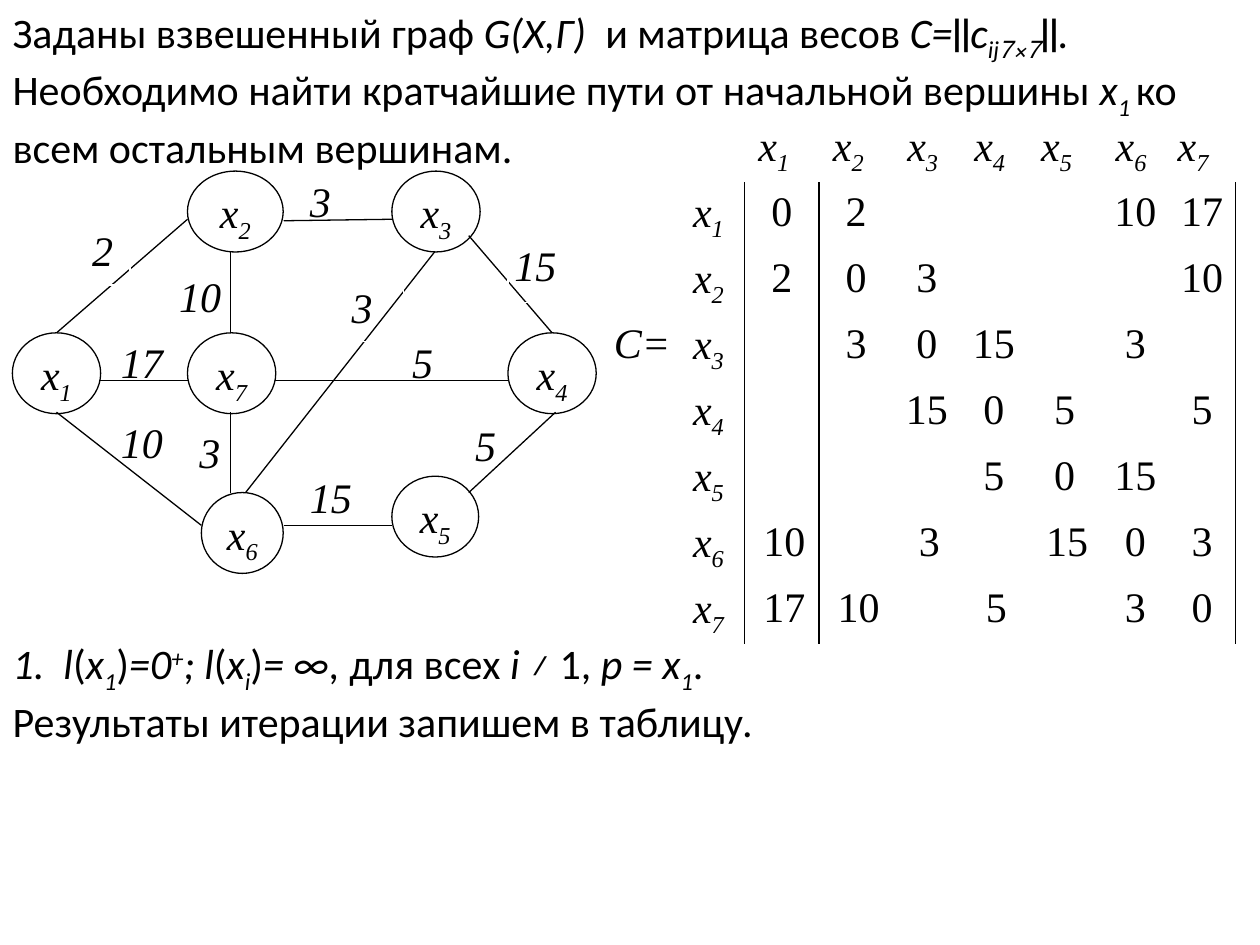
from lxml import etree
from pptx import Presentation
from pptx import util as u
from pptx.dml import color
from pptx.enum import shapes, text
from pptx.oxml import ns

Cm, Pt = u.Cm, u.Pt
SANS, SERIF = "Calibri", "Times New Roman"
BLACK, WHITE = "000000", "FFFFFF"
PLAIN = "{2D5ABB26-0587-4C30-8999-92F81FD0307C}"
TALL = 1.63

# Vertex: left, top, width
NODES = {
    1: (0.25, 6.71, 1.78), 2: (3.78, 3.45, 1.93), 3: (7.9, 3.45, 1.78),
    4: (10.24, 6.71, 1.78), 5: (7.9, 9.6, 1.75), 6: (4.06, 9.93, 1.65),
    7: (3.78, 6.71, 1.78),
}
# Edge: weight, line ends, label box
EDGES = {
    (1, 2): (2, (1.14, 6.71, 3.78, 4.42), (1.73, 4.45, 0.89, 1.3)),
    (1, 6): (10, (1.14, 8.31, 4.06, 10.59), (2.31, 8.31, 1.47, 1.3)),
    (1, 7): (17, (2.01, 7.67, 3.78, 7.67), (2.31, 6.71, 1.75, 1.3)),
    (2, 3): (3, (5.72, 4.45, 7.9, 4.42), (6.12, 3.45, 1.17, 1.3)),
    (2, 7): (10, (4.65, 5.08, 4.65, 6.71), (3.48, 5.38, 1.75, 1.3)),
    (3, 4): (15, (9.45, 4.75, 11.13, 6.71), (10.24, 4.75, 1.4, 1.35)),
    (3, 6): (3, (8.76, 5.08, 4.95, 9.93), (6.96, 5.59, 1.17, 1.3)),
    (4, 5): (5, (11.2, 8.31, 9.45, 9.93), (9.45, 8.38, 1.22, 1.3)),
    (4, 7): (5, (5.54, 7.67, 10.26, 7.67), (8.18, 6.71, 1.47, 1.3)),
    (5, 6): (15, (5.72, 10.59, 7.9, 10.59), (6.12, 9.42, 1.75, 1.17)),
    (6, 7): (3, (4.65, 8.31, 4.65, 9.93), (3.89, 8.51, 1.19, 1.3)),
}
FRONT = [(1, 2), (3, 4), (3, 6)]
WIDTHS = [1.6, 1.32, 1.5, 1.5, 1.35, 1.35, 1.5, 1.35, 1.35]

# Runs: text and style (i italic, s subscript, p superscript)
TASK = [
    ("Заданы взвешенный граф ", ""), ("G(X,Г) ", "i"),
    (" и матрица весов ", ""), ("C=", "i"), ("׀׀", ""), ("c", "i"),
    ("ij", "is"), ("׀׀", ""), ("7×7", "is"), (".", "i"),
    (" Необходимо найти кратчайшие пути от начальной вершины ", ""),
    ("x", "i"), ("1 ", "is"), ("ко всем остальным вершинам.", ""),
]
STEPS = [
    [("1.  l", "i"), ("(", ""), ("x", "i"), ("1", "is"), (")", ""),
     ("=0", "i"), ("+", "ip"), ("; l", "i"), ("(", ""), ("x", "i"),
     ("i", "is"), (")", ""), ("= ∞,", "i"), (" для всех ", ""),
     ("i ≠ ", "i"), ("1, ", ""), ("p = x", "i"), ("1", "is"), (".", "")],
    [("Результаты итерации запишем в таблицу.", "")],
]


def rgb(code):
    return color.RGBColor.from_string(code)


def vertex(num):
    return [("х", "i"), (str(num), "is")]


def write(par, runs, face=SERIF):
    for words, style in runs:
        run = par.add_run()
        run.text = words
        font = run.font
        font.name, font.size, font.italic = face, Pt(24), "i" in style
        font.color.rgb = rgb(BLACK)
        shift = {"s": "-25000", "p": "30000"}.get(style[-1:])
        if shift:
            run._r.get_or_add_rPr().set("baseline", shift)


def prose(holder, top, high, pars):
    holder.left, holder.top = 0, Cm(top)
    holder.width, holder.height = Cm(25.4), Cm(high)
    frame = holder.text_frame
    frame.word_wrap = True
    frame.vertical_anchor = text.MSO_ANCHOR.TOP
    frame.auto_size = text.MSO_AUTO_SIZE.SHAPE_TO_FIT_TEXT
    for num, runs in enumerate(pars):
        par = frame.add_paragraph() if num else frame.paragraphs[0]
        par.alignment, par.space_before = text.PP_ALIGN.LEFT, Pt(0)
        props = par._p.get_or_add_pPr()
        props.set("marL", "0")
        props.set("indent", "0")
        etree.SubElement(props, ns.qn("a:buNone"))
        write(par, runs, SANS)


def box(group, kind, area, runs, fill, line, align):
    shape = group.shapes.add_shape(kind, *map(Cm, area))
    shape.shadow.inherit = False
    if fill:
        shape.fill.solid()
        shape.fill.fore_color.rgb = rgb(fill)
    else:
        shape.fill.background()
    shape.line.color.rgb, shape.line.width = rgb(line), Pt(0.75)
    frame = shape.text_frame
    frame.vertical_anchor = text.MSO_ANCHOR.TOP
    frame.margin_left = frame.margin_right = Cm(0.13)
    frame.margin_top = frame.margin_bottom = Cm(0.08)
    par = frame.paragraphs[0]
    par.alignment, par.space_after = align, Pt(10)
    write(par, runs)


def label(group, pair):
    weight, _, area = EDGES[pair]
    box(group, shapes.MSO_SHAPE.RECTANGLE, area, [(str(weight), "i")],
        None, WHITE, text.PP_ALIGN.LEFT)


def edge(group, ends):
    line = group.shapes.add_connector(shapes.MSO_CONNECTOR.STRAIGHT,
                                      *map(Cm, ends))
    line.line.color.rgb, line.line.width = rgb(BLACK), Pt(0.75)
    etree.SubElement(line.element.spPr, ns.qn("a:effectLst"))


def graph(slide):
    group = slide.shapes.add_group_shape()
    for pair in EDGES:
        if pair not in FRONT:
            label(group, pair)
    for num, (left, top, wide) in NODES.items():
        box(group, shapes.MSO_SHAPE.OVAL, (left, top, wide, TALL),
            vertex(num), WHITE, BLACK, text.PP_ALIGN.CENTER)
    for _, ends, _ in EDGES.values():
        edge(group, ends)
    for pair in FRONT:
        label(group, pair)


def border(cell, side):
    line = etree.Element(ns.qn("a:ln" + side), w=str(Pt(1)))
    fill = etree.SubElement(line, ns.qn("a:solidFill"))
    etree.SubElement(fill, ns.qn("a:srgbClr"), val=BLACK)
    cell._tc.get_or_add_tcPr().insert(0, line)


def entry(cell, runs, align, inset):
    par = cell.text_frame.paragraphs[0]
    par.alignment, par.line_spacing = align, 1.15
    if inset:
        par._p.get_or_add_pPr().set("marL", str(Cm(0.1)))
    write(par, runs)


def content(row, col):
    """Runs, alignment and inset for a cell; row 0 and col 0 are headings."""
    if row * col == 0:
        num = row + col
        return vertex(num), text.PP_ALIGN.JUSTIFY, col < 7
    pair = min(row, col), max(row, col)
    weight = 0 if row == col else EDGES[pair][0]
    return [(str(weight), "")], text.PP_ALIGN.CENTER, row > 5 and col < 6


def matrix(slide):
    frame = slide.shapes.add_table(8, 9, Cm(12.09), Cm(2.34),
                                   Cm(sum(WIDTHS)), Cm(7.12))
    for style in frame.element.iter(ns.qn("a:tableStyleId")):
        style.text = PLAIN
    table = frame.table
    table.first_row = table.horz_banding = False
    for col, wide in zip(table.columns, WIDTHS):
        col.width = Cm(wide)
    for row in range(8):
        table.rows[row].height = Cm(0.89)
        for spot in range(9):
            cell, col = table.cell(row, spot), spot - 1
            cell.fill.background()
            cell.margin_left = cell.margin_right = Cm(0.18)
            cell.margin_top = cell.margin_bottom = 0
            pair = min(row, col), max(row, col)
            if col >= 0 and row + col and (
                    row * col == 0 or row == col or pair in EDGES):
                entry(cell, *content(row, col))
            # Bars on both sides of the weights
            if row and col in (0, 1, 7):
                border(cell, "L" if col == 1 else "R")
    entry(table.cell(3, 0), [("С=", "i")], text.PP_ALIGN.RIGHT, False)


def main():
    deck = Presentation()
    deck.slide_width, deck.slide_height = Cm(25.4), Cm(19.05)
    slide = deck.slides.add_slide(deck.slide_layouts[1])
    # Task, graph, weights, first step
    prose(slide.shapes.title, 0, 3.33, [TASK])
    graph(slide)
    matrix(slide)
    prose(slide.placeholders[1], 12.73, 2.31, STEPS)
    deck.save("out.pptx")


if __name__ == "__main__":
    main()
